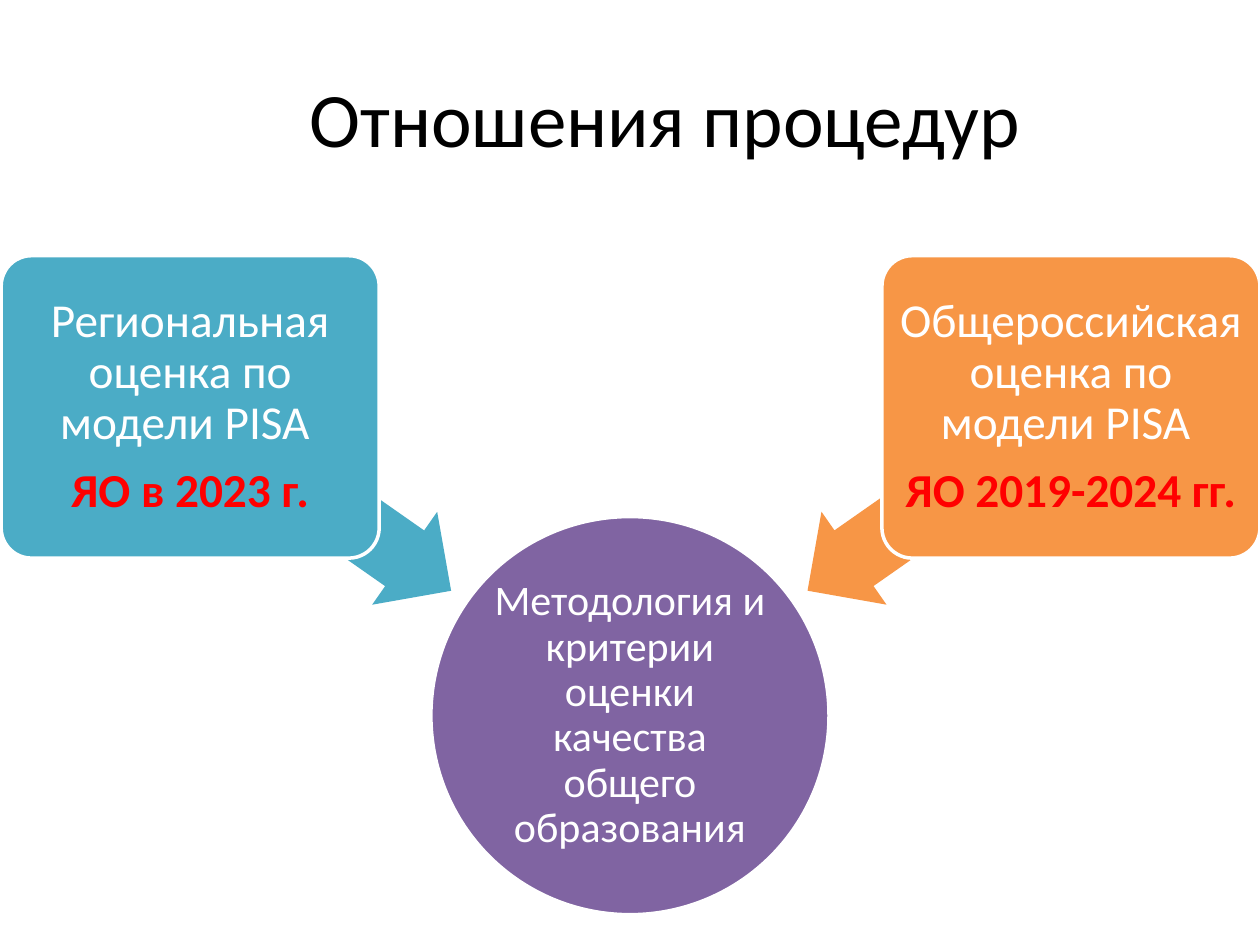
from pptx import Presentation
from pptx.dml.color import RGBColor
from pptx.enum.shapes import MSO_SHAPE as Shape
from pptx.enum.text import MSO_ANCHOR as Anchor, PP_ALIGN as Align
from pptx.util import Inches, Pt

WHITE, BLACK, RED = "FFFFFF", "000000", "FF0000"
PURPLE, TEAL, ORANGE = "8064A2", "4BACC6", "F79646"


def color(hex_value):
    """Turn a hex string into a colour."""
    return RGBColor.from_string(hex_value)


def write(box, lines, size, inset, spacing=0.9):
    """Fill a box with centred lines given as (text, colour, bold)."""
    frame = box.text_frame
    frame.word_wrap = True
    frame.vertical_anchor = Anchor.MIDDLE
    frame.margin_left = frame.margin_right = Inches(inset)
    frame.margin_top = frame.margin_bottom = Inches(inset)
    for index, (text, hex_value, bold) in enumerate(lines):
        para = frame.add_paragraph() if index else frame.paragraphs[0]
        para.alignment = Align.CENTER
        para.line_spacing = spacing
        if spacing < 1:
            para.space_after = Pt(round(size * 0.35, 1))
        span = para.add_run()
        span.text = text
        span.font.name = "Calibri"
        span.font.size = Pt(size)
        span.font.bold = bold
        span.font.color.rgb = color(hex_value)


def add_title(page, text):
    """Add the slide heading."""
    box = page.shapes.add_textbox(Inches(1.06), Inches(0.3), Inches(8.44), Inches(1.25))
    write(box, [(text, BLACK, False)], 44, 0.1, spacing=1)


def add_figure(page, kind, place, fill, outlined=True):
    """Add a filled shape at left, top, width, height in inches."""
    figure = page.shapes.add_shape(kind, *map(Inches, place))
    figure.shadow.inherit = False
    figure.fill.solid()
    figure.fill.fore_color.rgb = color(fill)
    if outlined:
        figure.line.color.rgb = color(WHITE)
        figure.line.width = Pt(2)
    else:
        figure.line.fill.background()
    return figure


def add_hub(page, text):
    """Add the central circle."""
    hub = add_figure(page, Shape.OVAL, (3.42, 4.1, 3.16, 3.16), PURPLE)
    write(hub, [(text, WHITE, False)], 24, 0.02)


def add_procedure(page, left, arrow_left, angle, fill, name, period):
    """Add a procedure card with its arrow towards the hub."""
    arrow = add_figure(page, Shape.LEFT_ARROW, (arrow_left, 3.51, 2.54, 0.9), fill, outlined=False)
    arrow.adjustments[0] = 0.6
    arrow.adjustments[1] = 0.5
    arrow.rotation = angle
    card = add_figure(page, Shape.ROUNDED_RECTANGLE, (left, 2.03, 3, 2.4), fill)
    card.adjustments[0] = 0.1
    write(card, [(name, WHITE, False), (period, RED, True)], 27, 0.06)


def main():
    """Build and save the slide."""
    deck = Presentation()
    deck.slide_width, deck.slide_height = Inches(10), Inches(7.5)
    page = deck.slides.add_slide(deck.slide_layouts[6])
    add_title(page, "Отношения процедур")
    add_hub(page, "Методология и критерии оценки качества общего образования")
    add_procedure(page, 0.01, 1.27, 215, TEAL,
                  "Региональная оценка по модели PISA ", "ЯО в 2023 г.")
    add_procedure(page, 7, 6.18, 325, ORANGE,
                  "Общероссийская оценка по модели PISA ", "ЯО 2019-2024 гг.")
    deck.save("out.pptx")


if __name__ == "__main__":
    main()
